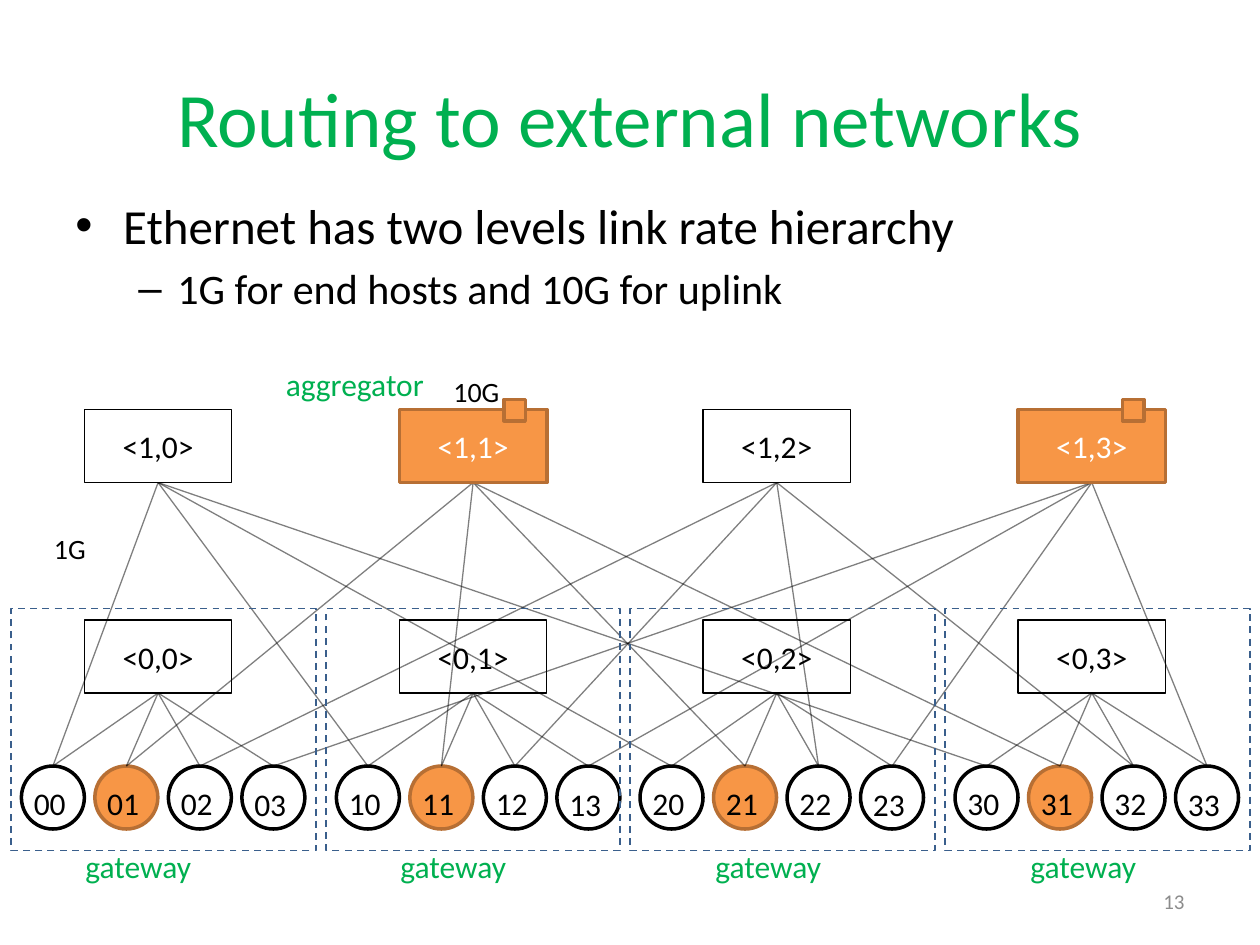
from lxml import etree
from pptx import Presentation
from pptx.dml.color import RGBColor
from pptx.enum.dml import MSO_LINE
from pptx.enum.shapes import MSO_CONNECTOR, MSO_SHAPE
from pptx.enum.text import MSO_ANCHOR, MSO_AUTO_SIZE, PP_ALIGN
from pptx.oxml.ns import qn
from pptx.util import Inches, Pt

RECTANGLE, OVAL = MSO_SHAPE.RECTANGLE, MSO_SHAPE.OVAL
STRAIGHT, DASH = MSO_CONNECTOR.STRAIGHT, MSO_LINE.DASH
TOP, MIDDLE = MSO_ANCHOR.TOP, MSO_ANCHOR.MIDDLE
LEFT, CENTER, RIGHT = PP_ALIGN.LEFT, PP_ALIGN.CENTER, PP_ALIGN.RIGHT
GROW = MSO_AUTO_SIZE.SHAPE_TO_FIT_TEXT

COLORS = {
    "green": "00B050", "black": "000000", "white": "FFFFFF", "gray": "8C8C8C",
    "orange": "F79646", "brown": "B76F34", "blue": "3A5F8C",
}

# Diagram geometry in inches
POD_LEFTS = [0.17, 2.67, 5.08, 7.58]
FRAME_WIDTHS = [2.42, 2.33, 2.42, 2.42]
BOX_WIDTH, BOX_HEIGHT, BOX_OFFSET = 1.17, 0.58, 0.5
AGGREGATOR_TOP, SWITCH_TOP = 3.25, 4.92
NODE_TOP, NODE_SIZE, NODE_STEP = 6.08, 0.5, 1.75 / 3
GATEWAY_NODE = 1
UPLINK_AGGREGATORS = (1, 3)


def color(name):
    return RGBColor.from_string(COLORS[name])


def write(paragraph, text, size=18, ink="black", align=LEFT, font="Calibri"):
    paragraph.alignment = align
    run = paragraph.add_run()
    run.text = text
    run.font.name = font
    run.font.size = Pt(size)
    run.font.color.rgb = color(ink)


class SlideBuilder:
    def __init__(self, presentation):
        self.slide = presentation.slides.add_slide(presentation.slide_layouts[5])
        self.shapes = self.slide.shapes

    def title(self, text, left, top, width, height):
        shape = self.shapes.title
        shape.left, shape.top = Inches(left), Inches(top)
        shape.width, shape.height = Inches(width), Inches(height)
        shape.text_frame.vertical_anchor = MIDDLE
        write(shape.text_frame.paragraphs[0], text, size=44, ink="green", align=CENTER)

    def text_frame(self, left, top, width, height, anchor=TOP):
        shape = self.shapes.add_textbox(
            Inches(left), Inches(top), Inches(width), Inches(height))
        shape.text_frame.word_wrap = True
        shape.text_frame.vertical_anchor = anchor
        return shape.text_frame

    def label(self, text, left, top, width, height=0.4, **text_format):
        frame = self.text_frame(left, top, width, height)
        frame.auto_size = GROW
        write(frame.paragraphs[0], text, **text_format)

    def bullets(self, items, left, top, width, height):
        frame = self.text_frame(left, top, width, height)
        for index, (text, size, mark, margin, indent) in enumerate(items):
            paragraph = frame.add_paragraph() if index else frame.paragraphs[0]
            write(paragraph, text, size=size)
            paragraph.level = index
            paragraph.space_before = Pt(size * 0.2)
            properties = paragraph._p.get_or_add_pPr()
            properties.set("marL", str(Inches(margin)))
            properties.set("indent", str(Inches(-indent)))
            etree.SubElement(properties, qn("a:buFont"), typeface="Arial")
            etree.SubElement(properties, qn("a:buChar"), char=mark)

    def shape(self, kind, left, top, width, height, fill=None, line="black",
              weight=0.75, dash=None, text=None, ink="black"):
        shape = self.shapes.add_shape(
            kind, Inches(left), Inches(top), Inches(width), Inches(height))
        shape.shadow.inherit = False
        if fill:
            shape.fill.solid()
            shape.fill.fore_color.rgb = color(fill)
        else:
            shape.fill.background()
        shape.line.color.rgb = color(line)
        shape.line.width = Pt(weight)
        if dash:
            shape.line.dash_style = dash
        if text:
            shape.text_frame.vertical_anchor = MIDDLE
            write(shape.text_frame.paragraphs[0], text, ink=ink, align=CENTER)

    def link(self, start, end):
        connector = self.shapes.add_connector(
            STRAIGHT, *(Inches(value) for value in (*start, *end)))
        connector.line.color.rgb = color("black")
        connector.line.width = Pt(0.75)
        properties = connector._element.spPr
        rgb = properties.find(".//" + qn("a:srgbClr"))
        etree.SubElement(rgb, qn("a:alpha"), val="50000")
        etree.SubElement(properties, qn("a:effectLst"))

    def box(self, text, left, top, highlighted=False):
        style = (dict(fill="orange", line="brown", weight=2, ink="white")
                 if highlighted else dict(fill="white"))
        self.shape(RECTANGLE, left, top, BOX_WIDTH, BOX_HEIGHT, text=text, **style)

    def node(self, text, left, highlighted, label_top):
        fill, line = ("orange", "brown") if highlighted else ("white", "black")
        self.shape(OVAL, left, NODE_TOP, NODE_SIZE, NODE_SIZE,
                   fill=fill, line=line, weight=2)
        self.label(text, left, label_top, NODE_SIZE)


def main():
    presentation = Presentation()
    presentation.slide_width, presentation.slide_height = Inches(10), Inches(7.5)
    builder = SlideBuilder(presentation)

    # Title and bullets
    builder.title("Routing to external networks", 0.5, 0.3, 9, 1.25)
    builder.bullets([
        ("Ethernet has two levels link rate hierarchy", 28, "•", 0.38, 0.38),
        ("1G for end hosts and 10G for uplink", 24, "–", 0.81, 0.31),
    ], 0.5, 1.5, 9, 4.95)

    # Pods: a switch box linked to four nodes
    hubs = [left + BOX_OFFSET + BOX_WIDTH / 2 for left in POD_LEFTS]
    node_tops = []
    for pod, left in enumerate(POD_LEFTS):
        builder.box(f"<0,{pod}>", left + BOX_OFFSET, SWITCH_TOP)
        for number in range(4):
            node_left = left + number * NODE_STEP
            node_top = (node_left + NODE_SIZE / 2, NODE_TOP)
            node_tops.append(node_top)
            builder.node(f"{pod}{number}", node_left, number == GATEWAY_NODE,
                         6.18 if number == 3 else 6.17)
            builder.link(node_top, (hubs[pod], SWITCH_TOP + BOX_HEIGHT))

    # Node n of every pod is linked to aggregator n
    for index, node_top in enumerate(node_tops):
        builder.link(node_top, (hubs[index % 4], AGGREGATOR_TOP + BOX_HEIGHT))

    # Pod frames and gateway labels
    for pod, (left, width) in enumerate(zip(POD_LEFTS, FRAME_WIDTHS)):
        builder.shape(RECTANGLE, left - 0.08, 4.83, width, 1.92,
                      line="blue", weight=1, dash=DASH)
        builder.label("gateway", 0.58 + 2.5 * pod, 6.67, 1.25, ink="green")

    # Aggregators, with an uplink port on the highlighted ones
    for number, pod_left in enumerate(POD_LEFTS):
        left = pod_left + BOX_OFFSET
        has_uplink = number in UPLINK_AGGREGATORS
        builder.box(f"<1,{number}>", left, AGGREGATOR_TOP, has_uplink)
        if has_uplink:
            builder.shape(RECTANGLE, left + 0.83, 3.17, 0.17, 0.17,
                          fill="orange", line="brown", weight=2)

    # Link rates, aggregator label and slide number
    builder.label("aggregator", 2.17, 2.85, 1.67, ink="green")
    builder.label("10G", 3.5, 2.92, 0.75, 0.37, size=16)
    builder.label("1G", 0.33, 4.17, 0.75, 0.37, size=16)
    number_frame = builder.text_frame(7.17, 6.95, 2.33, 0.4, MIDDLE)
    write(number_frame.paragraphs[0], "13", size=12, ink="gray", align=RIGHT)

    presentation.save("out.pptx")


if __name__ == "__main__":
    main()
